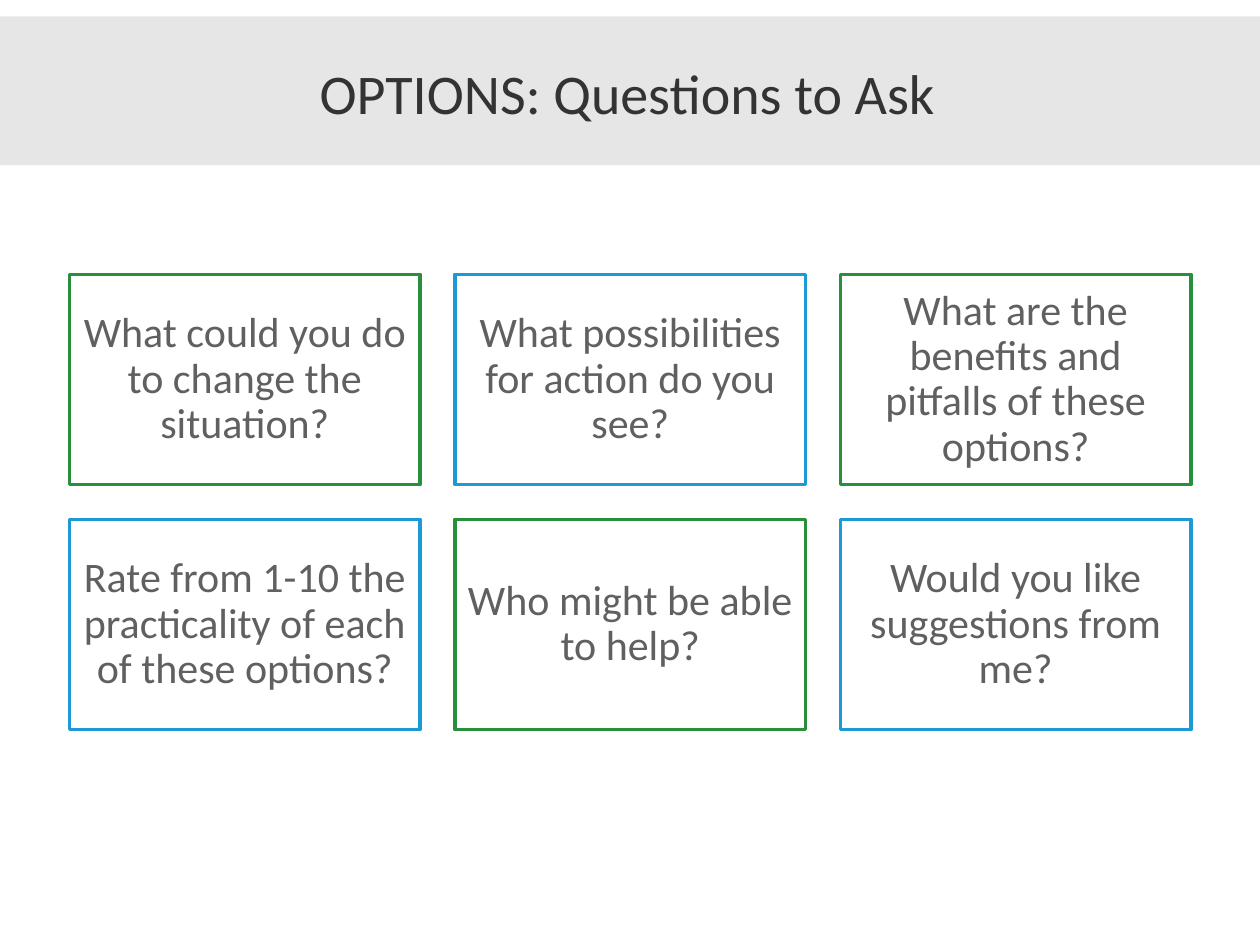
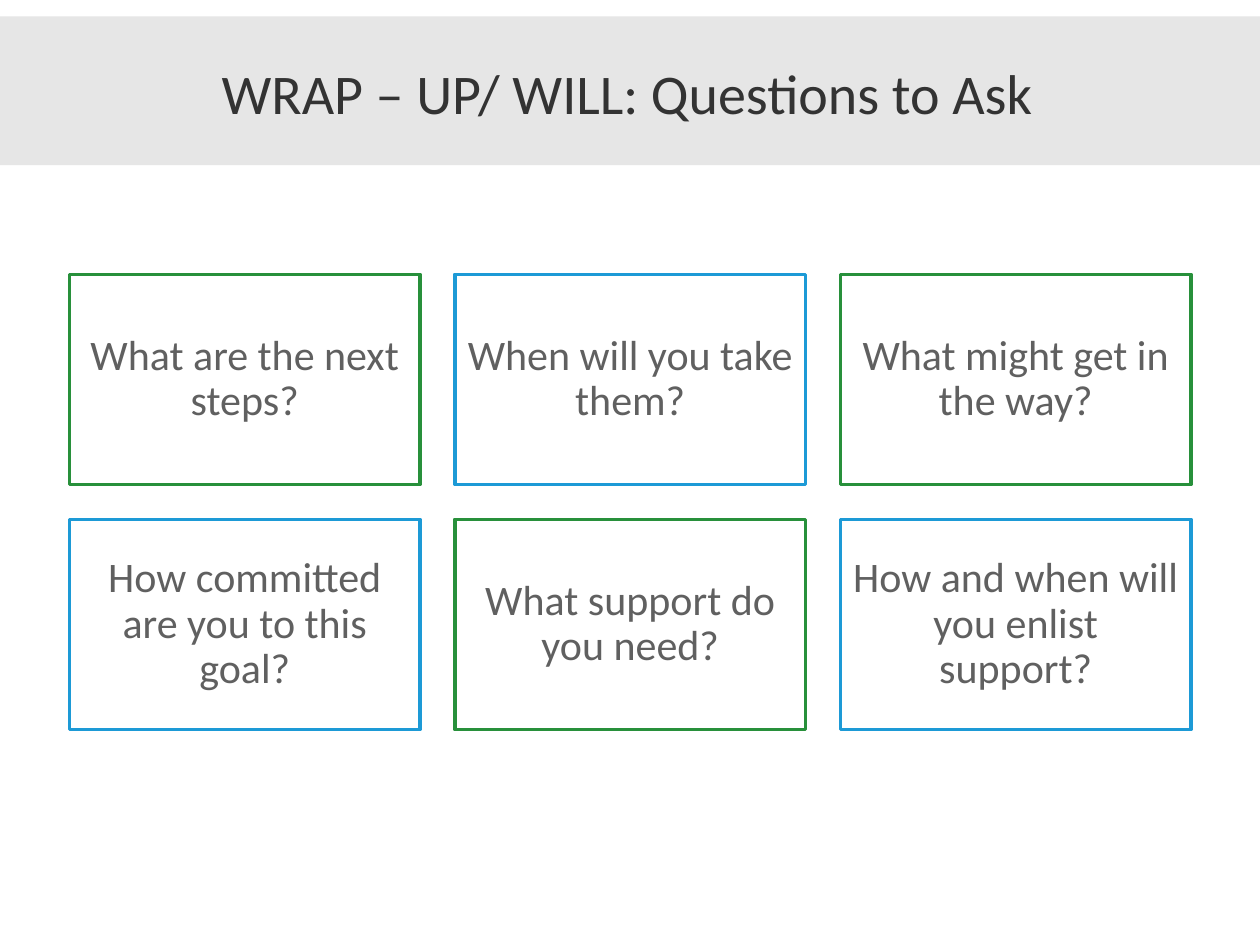
import pptx
import pptx.dml.color
import pptx.enum.shapes
import pptx.enum.text
import pptx.util

Cm = pptx.util.Cm
Pt = pptx.util.Pt
RGBColor = pptx.dml.color.RGBColor

SLIDES = [
    ("OPTIONS: Questions to Ask", [
        "What could you do to change the situation?",
        "What possibilities for action do you see?",
        "What are the benefits and pitfalls of these options?",
        "Rate from 1-10 the practicality of each of these options?",
        "Who might be able to help?",
        "Would you like suggestions from me?",
    ]),
    ("WRAP – UP/ WILL: Questions to Ask", [
        "What are the next steps?",
        "When will you take them?",
        "What might get in the way?",
        "How committed are you to this goal?",
        "What support do you need?",
        "How and when will you enlist support?",
    ]),
]

FONT = "Calibri"
BAND_GREY = RGBColor(0xE6, 0xE6, 0xE6)
TITLE_GREY = RGBColor(0x33, 0x33, 0x33)
TEXT_GREY = RGBColor(0x60, 0x60, 0x60)
GREEN = RGBColor(0x28, 0x90, 0x3B)
BLUE = RGBColor(0x1D, 0x9A, 0xD6)
BORDERS = (GREEN, BLUE)

SLIDE_W, SLIDE_H = Cm(25.4), Cm(19.05)
COLUMNS = 3
GRID_LEFT, GRID_TOP = Cm(1.4), Cm(5.53)
CARD_W, CARD_H, GAP = Cm(7.07), Cm(4.24), Cm(0.7)
CARD_INSET = Cm(0.25)


def add_rectangle(s, left, top, width, height):
    sp = s.shapes.add_shape(pptx.enum.shapes.MSO_SHAPE.RECTANGLE,
                            left, top, width, height)
    sp.shadow.inherit = False
    return sp


def write_centred(sp, text, size, colour):
    tf = sp.text_frame
    tf.text = text
    tf.word_wrap = True
    tf.vertical_anchor = pptx.enum.text.MSO_ANCHOR.MIDDLE
    p = tf.paragraphs[0]
    p.alignment = pptx.enum.text.PP_ALIGN.CENTER
    font = p.runs[0].font
    font.name, font.size = FONT, Pt(size)
    font.color.rgb = colour
    return tf


def add_title_band(s, title):
    band = add_rectangle(s, 0, Cm(0.33), SLIDE_W, Cm(3))
    band.fill.solid()
    band.fill.fore_color.rgb = BAND_GREY
    band.line.fill.background()
    box = s.shapes.add_textbox(Cm(1.7), Cm(0.4), Cm(21.9), Cm(2.93))
    write_centred(box, title, 32, TITLE_GREY)


def add_question_card(s, index, question):
    row, column = divmod(index, COLUMNS)
    card = add_rectangle(s, GRID_LEFT + column * (CARD_W + GAP),
                         GRID_TOP + row * (CARD_H + GAP), CARD_W, CARD_H)
    card.fill.background()
    card.line.color.rgb = BORDERS[index % len(BORDERS)]
    card.line.width = Pt(2)
    tf = write_centred(card, question, 24, TEXT_GREY)
    tf.margin_left = tf.margin_right = CARD_INSET
    tf.margin_top = tf.margin_bottom = CARD_INSET
    tf.paragraphs[0].line_spacing = 0.9


def main():
    prs = pptx.Presentation()
    prs.slide_width, prs.slide_height = SLIDE_W, SLIDE_H
    blank = prs.slide_layouts[6]
    for title, questions in SLIDES:
        s = prs.slides.add_slide(blank)
        add_title_band(s, title)
        for index, question in enumerate(questions):
            add_question_card(s, index, question)
    prs.save("out.pptx")


if __name__ == "__main__":
    main()
